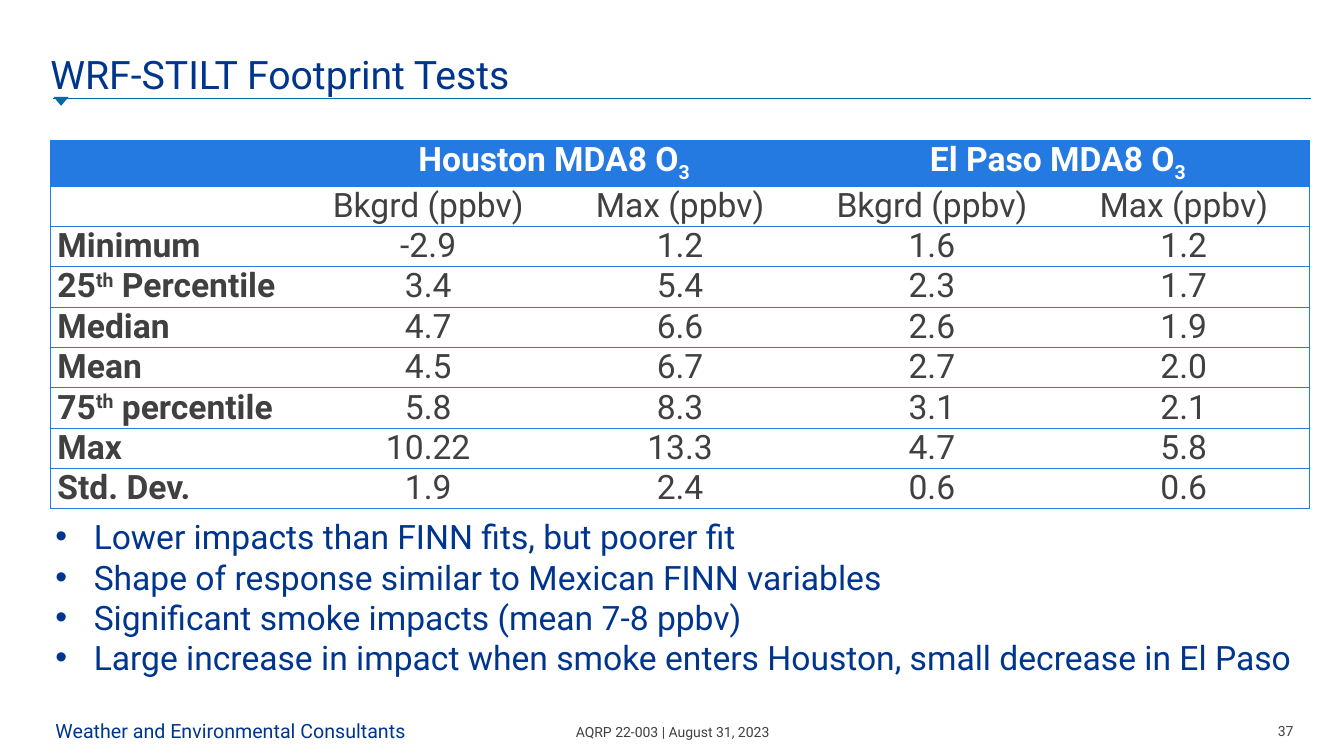
"""Build the slide on WRF-STILT footprint tests."""
from lxml.etree import SubElement
from pptx import Presentation
from pptx.dml.color import RGBColor
from pptx.enum.shapes import MSO_CONNECTOR as Connector, MSO_SHAPE as Shape
from pptx.enum.text import MSO_ANCHOR as Anchor, PP_ALIGN as Align
from pptx.oxml.ns import qn
from pptx.util import Inches, Pt

NAVY = RGBColor(0x00, 0x35, 0x8E)
TEAL = RGBColor(0x00, 0x6B, 0xA6)
BLUE = RGBColor(0x25, 0x7A, 0xE1)
GREY = RGBColor(0x3F, 0x40, 0x3F)
WHITE = RGBColor(0xFF, 0xFF, 0xFF)

SHIFT_MARK = "^"
HEADER = ["", "Houston MDA8 O^3", "", "El Paso MDA8 O^3", ""]
ROWS = [
    ["", "Bkgrd (ppbv)", "Max (ppbv)", "Bkgrd (ppbv)", "Max (ppbv)"],
    ["Minimum", "-2.9", "1.2", "1.6", "1.2"],
    ["25^th^ Percentile", "3.4", "5.4", "2.3", "1.7"],
    ["Median", "4.7", "6.6", "2.6", "1.9"],
    ["Mean", "4.5", "6.7", "2.7", "2.0"],
    ["75^th^ percentile", "5.8", "8.3", "3.1", "2.1"],
    ["Max", "10.22", "13.3", "4.7", "5.8"],
    ["Std. Dev.", "1.9", "2.4", "0.6", "0.6"],
]
FINDINGS = [
    "Lower impacts than FINN fits, but poorer fit",
    "Shape of response similar to Mexican FINN variables",
    "Significant smoke impacts (mean 7-8 ppbv)",
    "Large increase in impact when smoke enters Houston, small decrease in El Paso",
]


def write(paragraph, text, size=24, color=NAVY, bold=False, align=Align.LEFT, shift=0):
    paragraph.alignment = align
    for index, part in enumerate(text.split(SHIFT_MARK) if text else []):
        run = paragraph.add_run()
        run.text = part
        run.font.name = "Roboto"
        run.font.size = Pt(size)
        run.font.bold = bold
        run.font.color.rgb = color
        if index % 2:
            run.font._element.set("baseline", str(shift * 1000))


class SlideBuilder:
    def __init__(self, presentation):
        self.width = presentation.slide_width
        self.height = presentation.slide_height
        self.slide = presentation.slides.add_slide(presentation.slide_layouts[6])
        self.shapes = self.slide.shapes

    def across(self, percent):
        return round(self.width * percent / 100)

    def down(self, percent):
        return round(self.height * percent / 100)

    def area(self, left, top, width, height):
        return self.across(left), self.down(top), self.across(width), self.down(height)

    def text(self, area, lines, inset=0.0, anchor=Anchor.TOP, bullet=False,
             spacing=None, **style):
        frame = self.shapes.add_textbox(*self.area(*area)).text_frame
        frame.word_wrap = True
        frame.vertical_anchor = anchor
        frame.margin_left = Inches(inset)
        frame.margin_right = frame.margin_top = frame.margin_bottom = 0
        for index, line in enumerate(lines):
            paragraph = frame.add_paragraph() if index else frame.paragraphs[0]
            if bullet:
                self.bullet(paragraph)
            if spacing:
                paragraph.line_spacing = spacing
            write(paragraph, line, **style)

    def bullet(self, paragraph):
        properties = paragraph._p.get_or_add_pPr()
        properties.set("marL", str(Inches(0.38)))
        properties.set("indent", str(-Inches(0.38)))
        SubElement(properties, qn("a:buFont"), typeface="Arial")
        SubElement(properties, qn("a:buChar"), char="•")

    def rule(self, left, right, top):
        line = self.shapes.add_connector(
            Connector.STRAIGHT, self.across(left), self.down(top),
            self.across(right), self.down(top))
        line.line.color.rgb = TEAL
        line.line.width = Pt(0.75)
        SubElement(line._element.spPr, qn("a:effectLst"))

    def marker(self, area):
        triangle = self.shapes.add_shape(Shape.ISOSCELES_TRIANGLE, *self.area(*area))
        triangle.rotation = 180
        triangle.shadow.inherit = False
        triangle.fill.solid()
        triangle.fill.fore_color.rgb = TEAL
        triangle.line.fill.background()

    def table(self, area, header_height, header, rows):
        left, top, width, height = self.area(*area)
        count = len(header)
        table = self.shapes.add_table(
            len(rows) + 1, count, left, top, width, height).table
        table.first_row = table.horz_banding = False
        body_height = (height - self.down(header_height)) // len(rows)
        for row_index, values in enumerate([header] + rows):
            is_header = row_index == 0
            table.rows[row_index].height = (
                self.down(header_height) if is_header else body_height)
            for column, value in enumerate(values):
                cell = table.cell(row_index, column)
                cell.margin_left = cell.margin_right = Inches(0.07)
                cell.margin_top = cell.margin_bottom = 0
                self.border(cell, "lnL", column == 0)
                self.border(cell, "lnR", column == count - 1)
                self.border(cell, "lnT", True)
                self.border(cell, "lnB", True)
                if is_header:
                    cell.fill.solid()
                    cell.fill.fore_color.rgb = BLUE
                else:
                    cell.fill.background()
                write(cell.text_frame.paragraphs[0], value,
                      color=WHITE if is_header else GREY,
                      bold=is_header or column == 0,
                      align=Align.CENTER if column else Align.JUSTIFY,
                      shift=-25 if is_header else 30)
        for column in range(1, count, 2):
            table.cell(0, column).merge(table.cell(0, column + 1))

    def border(self, cell, side, visible):
        line = SubElement(cell._tc.get_or_add_tcPr(), qn(f"a:{side}"), w=str(Pt(0.75)))
        if visible:
            fill = SubElement(line, qn("a:solidFill"))
            SubElement(fill, qn("a:srgbClr"), val=str(BLUE))
        else:
            SubElement(line, qn("a:noFill"))


def main():
    presentation = Presentation()
    presentation.slide_width = Inches(13.33)
    presentation.slide_height = Inches(7.5)
    builder = SlideBuilder(presentation)
    builder.text((38.11, 95.73, 23.86, 2.27), ["AQRP 22-003 | August 31, 2023"],
                 size=10, color=GREY, align=Align.CENTER)
    builder.text((94.82, 95.6, 1.43, 2.27), ["37"],
                 size=10, color=GREY, align=Align.RIGHT)
    builder.rule(3.98, 97.52, 13.07)
    builder.marker((3.98, 12.8, 1.13, 1.2))
    builder.text((3.75, 95.07, 30, 3.2), ["Weather and Environmental Consultants"],
                 inset=0.05, size=14)
    builder.text((3.75, 3.07, 75.02, 9.73), ["WRF-STILT Footprint Tests"],
                 anchor=Anchor.BOTTOM, spacing=0.8, size=28)
    builder.table((3.75, 18.53, 93.7, 48), 5.87, HEADER, ROWS)
    builder.text((3.75, 68.27, 93.77, 22), FINDINGS, inset=0.05, bullet=True)
    presentation.save("out.pptx")


if __name__ == "__main__":
    main()
